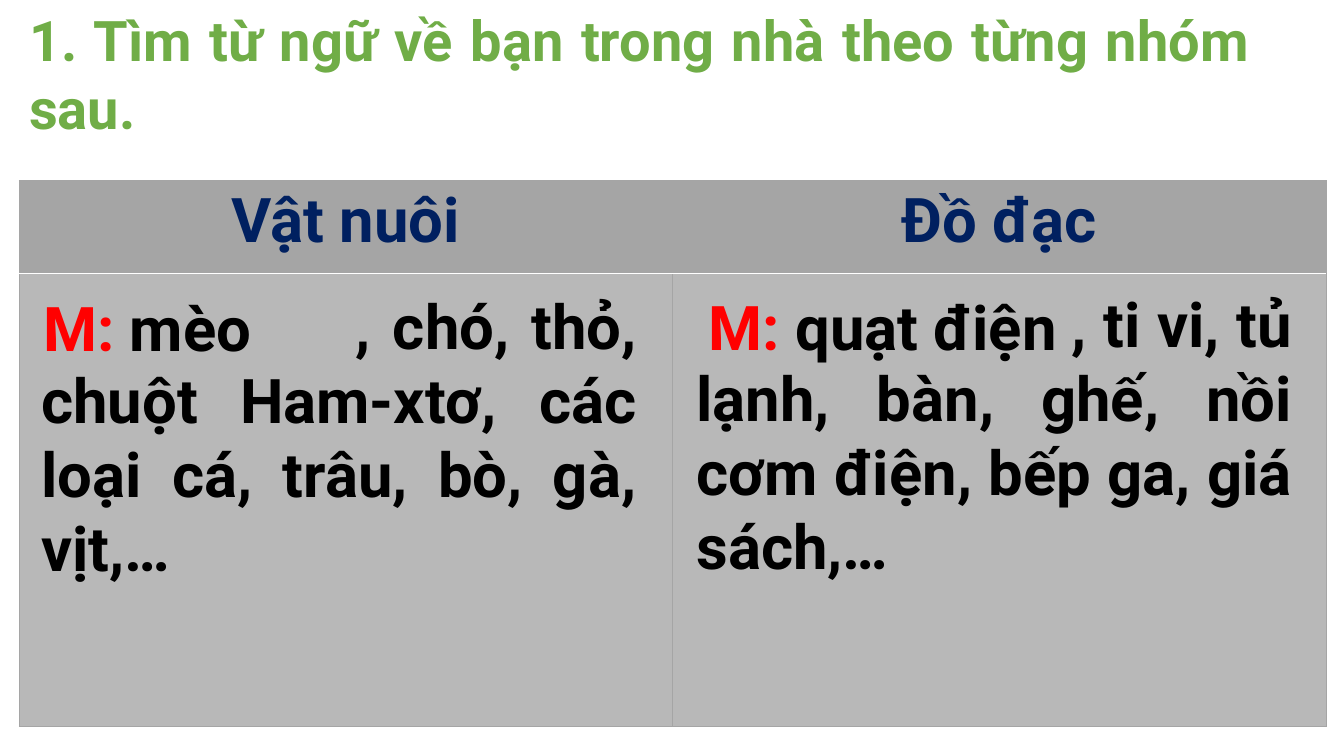
from dataclasses import dataclass
from pptx import Presentation
from pptx.dml.color import RGBColor as RGB
from pptx.enum.text import MSO_AUTO_SIZE as Fit, PP_ALIGN as Align
from pptx.oxml.ns import qn
from pptx.util import Inches, Pt
from lxml.etree import SubElement as Sub


@dataclass(frozen=True)
class Theme:
    font: str = "Roboto"
    green: str = "70AD47"
    navy: str = "002060"
    red: str = "FF0000"
    black: str = "000000"
    white: str = "FFFFFF"
    gray: str = "A5A5A5"
    pale: str = "B8B8B8"
    head: int = 40
    body: int = 44


T = Theme()


def add_run(para, text, color, size=T.body):
    run = para.add_run()
    run.text = text
    font = run.font
    font.name, font.size, font.bold = T.font, Pt(size), True
    font.color.rgb = RGB.from_string(color)


def add_text(slide, box, runs, align=Align.LEFT, size=T.body, indent=0):
    shape = slide.shapes.add_textbox(*map(Inches, box))
    frame = shape.text_frame
    frame.word_wrap = True
    frame.auto_size = Fit.SHAPE_TO_FIT_TEXT
    para = frame.paragraphs[0]
    para.alignment = align
    if indent:
        props = para._p.get_or_add_pPr()
        props.set("marL", "0")
        props.set("indent", str(Inches(indent)))
    for text, color in runs:
        add_run(para, text, color, size)


def add_edge(cell, side, color, width):
    line = Sub(cell._tc.get_or_add_tcPr(), qn(f"a:ln{side}"), w=str(Pt(width)))
    fill = Sub(line, qn("a:solidFill"))
    Sub(fill, qn("a:srgbClr"), val=color)


def add_grid(slide, box, heads, top):
    """Two columns with a header row and an empty body row."""
    left, y, width, height = box
    grid = slide.shapes.add_table(2, len(heads), *map(Inches, box)).table
    grid.rows[0].height = Inches(top)
    grid.rows[1].height = Inches(height - top)
    for col, head in enumerate(heads):
        for row, shade in enumerate((T.gray, T.pale)):
            cell = grid.cell(row, col)
            for side in "LRTB":
                inner = side == "TB"[1 - row]
                add_edge(cell, side, T.white if inner else T.gray,
                         1 if inner else 0.5)
            cell.fill.solid()
            cell.fill.fore_color.rgb = RGB.from_string(shade)
        para = grid.cell(0, col).text_frame.paragraphs[0]
        para.alignment = Align.CENTER
        add_run(para, head, T.navy)


def add_group(slide, box, model, place, words, indent):
    """Sample word, with the answers running on from it."""
    left, top, width, height = box
    dx, dy, wide = place
    add_text(slide, (left + dx, top + dy, wide, 0.84),
             [("M:", T.red), (model, T.black)])
    add_text(slide, box, [(words, T.black)], Align.JUSTIFY, indent=indent)


def build(slide):
    # Task
    add_text(slide, (0.19, 0.01, 12.3, 1.45),
             [("1. Tìm từ ngữ về bạn trong nhà theo từng nhóm sau.", T.green)],
             Align.JUSTIFY, T.head)
    # Table
    add_grid(slide, (0.19, 1.79, 12.96, 5.42), ("Vật nuôi", "Đồ đạc"), 0.92)
    # Answers
    add_group(slide, (0.31, 2.81, 6.11, 3.06), " mèo", (0.02, 0.02, 2.55),
              ", chó, thỏ, chuột Ham-xtơ, các loại cá, trâu, bò, gà, vịt,…",
              3.12)
    add_group(slide, (6.81, 2.79, 6.11, 3.06), " quạt điện", (0.12, 0.03, 4.33),
              ", ti vi, tủ lạnh, bàn, ghế, nồi cơm điện, bếp ga, giá sách,…",
              3.72)


def main():
    deck = Presentation()
    deck.slide_width, deck.slide_height = Inches(13.33), Inches(7.5)
    build(deck.slides.add_slide(deck.slide_layouts[6]))
    deck.save("out.pptx")


if __name__ == "__main__":
    main()
